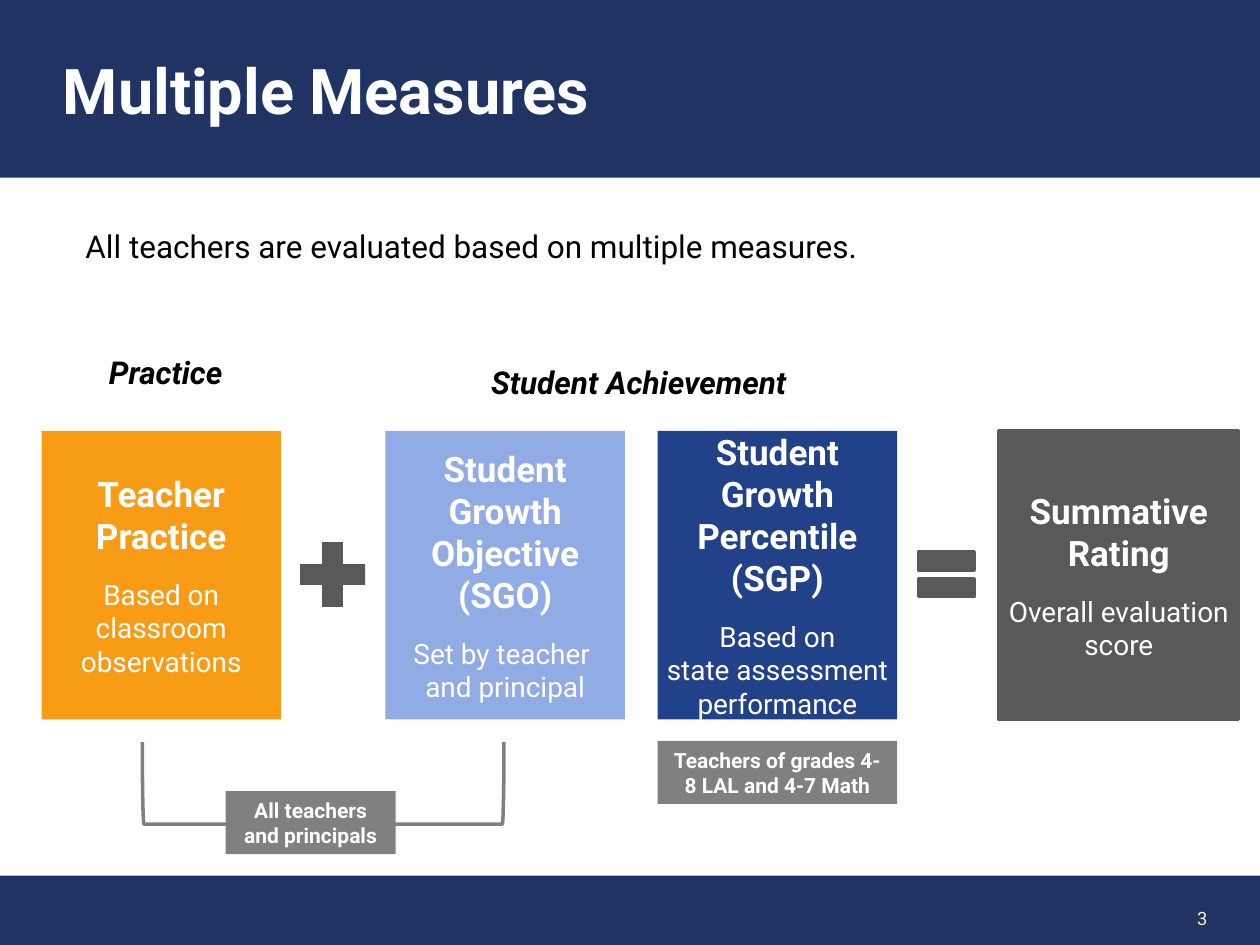
from dataclasses import dataclass

import pptx
import pptx.dml.color
import pptx.enum.shapes
import pptx.enum.text
import pptx.oxml
import pptx.oxml.ns
import pptx.util
from pptx.util import Inches

SHAPE = pptx.enum.shapes.MSO_SHAPE
ALIGN = pptx.enum.text.PP_ALIGN
ANCHOR = pptx.enum.text.MSO_ANCHOR

FONT = "Roboto"
NAVY, WHITE, BLACK = "213363", "FFFFFF", "000000"
DARK_GRAY, GRAY = "595959", "808080"
CARD_TOP, CARD_WIDTH, CARD_HEIGHT = 3.42, 1.9, 2.29


@dataclass
class Line:
    text: str
    size: float
    color: str = WHITE
    bold: bool = False
    italic: bool = False
    align: ALIGN = ALIGN.CENTER
    space_after: float = 0


@dataclass
class Card:
    left: float
    fill: str
    heading: str
    detail: str
    inset: float
    outlined: bool = False


@dataclass
class Label:
    left: float
    top: float
    width: float
    line: Line
    height: float = 0.4
    fill: str = ""
    anchor: ANCHOR = ANCHOR.TOP


CARDS = [
    Card(0.33, "F89C15", "Teacher\vPractice", "Based on classroom observations", 0.05),
    Card(3.06, "91ABE5", "Student Growth Objective\v(SGO)",
         "Set by teacher \vand principal", 0.03),
    Card(5.22, "214189", "Student Growth Percentile (SGP)",
         "Based on\vstate assessment performance", 0.03),
    Card(7.93, DARK_GRAY, "Summative Rating", "Overall evaluation score", 0, True),
]

LABELS = [
    Label(1.79, 6.28, 1.35, Line("All teachers and principals", 12, bold=True), 0.5, GRAY),
    Label(5.22, 5.88, CARD_WIDTH,
          Line("Teachers of grades 4-8 LAL and 4-7 Math", 12, bold=True), 0.5, GRAY),
    Label(0.37, 2.75, 1.89, Line("Practice", 18, BLACK, True, True)),
    Label(3.04, 2.83, 4.06, Line("Student Achievement", 18, BLACK, True, True)),
    Label(0.58, 1.75, 7.5, Line("All teachers are evaluated based on multiple measures.",
                                18, BLACK, align=ALIGN.LEFT)),
    Label(8.22, 7.09, 1.46, Line("3", 10.5, "FEEBD0", align=ALIGN.RIGHT),
          anchor=ANCHOR.MIDDLE),
]


def rgb(color: str) -> pptx.dml.color.RGBColor:
    return pptx.dml.color.RGBColor.from_string(color)


def add_box(page, kind, left: float, top: float, width: float, height: float,
            fill: str = "", outline: str = ""):
    box = page.shapes.add_shape(kind, Inches(left), Inches(top), Inches(width), Inches(height))
    box.shadow.inherit = False
    if fill:
        box.fill.solid()
        box.fill.fore_color.rgb = rgb(fill)
    else:
        box.fill.background()
    if outline:
        box.line.color.rgb = rgb(outline)
        box.line.width = pptx.util.Pt(2)
    else:
        box.line.fill.background()
    return box


def write(box, lines: list[Line], anchor=ANCHOR.MIDDLE,
          left: float = 0.1, right: float = 0.1) -> None:
    frame = box.text_frame
    frame.word_wrap = True
    frame.vertical_anchor = anchor
    frame.margin_left, frame.margin_right = Inches(left), Inches(right)
    frame.margin_top = frame.margin_bottom = Inches(0.05)
    for index, line in enumerate(lines):
        para = frame.add_paragraph() if index else frame.paragraphs[0]
        para.text = line.text
        para.alignment = line.align
        para.space_after = pptx.util.Pt(line.space_after)
        for span in para.runs:
            span.font.name = FONT
            span.font.size = pptx.util.Pt(line.size)
            span.font.bold, span.font.italic = line.bold, line.italic
            span.font.color.rgb = rgb(line.color)
        # Line breaks take the text size, so that line heights agree
        for line_break in para._p.findall(pptx.oxml.ns.qn("a:br")):
            properties = pptx.oxml.parse_xml(
                f'<a:rPr {pptx.oxml.ns.nsdecls("a")} sz="{round(line.size * 100)}"/>')
            line_break.append(properties)


def draw_card(page, card: Card) -> None:
    box = add_box(page, SHAPE.RECTANGLE, card.left, CARD_TOP, CARD_WIDTH, CARD_HEIGHT,
                  card.fill, card.fill if card.outlined else "")
    write(box, [Line(card.heading, 20, bold=True, space_after=12), Line(card.detail, 16)],
          left=card.inset, right=card.inset)


def draw_label(page, label: Label) -> None:
    place = (label.left, label.top, label.width, label.height)
    if label.fill:
        box = add_box(page, SHAPE.RECTANGLE, *place, label.fill)
    else:
        box = page.shapes.add_textbox(*map(Inches, place))
    write(box, [label.line], label.anchor)


def main() -> None:
    deck = pptx.Presentation()
    deck.slide_width, deck.slide_height = Inches(10), Inches(7.5)
    page = deck.slides.add_slide(deck.slide_layouts[6])

    # Footer band and title band
    add_box(page, SHAPE.RECTANGLE, 0, 6.95, 10, 0.55, NAVY)
    title = add_box(page, SHAPE.RECTANGLE, 0, 0, 10, 1.41, NAVY)
    write(title, [Line("Multiple Measures", 36, bold=True, align=ALIGN.LEFT)], left=0.5)

    # Measures and the signs between them
    for card in CARDS:
        draw_card(page, card)
    add_box(page, SHAPE.MATH_PLUS, 2.29, 4.21, 0.7, 0.7, DARK_GRAY)
    add_box(page, SHAPE.MATH_EQUAL, 7.21, 4.26, 0.6, 0.6, DARK_GRAY, DARK_GRAY)

    # Bracket opening upwards under the first two measures
    bracket = add_box(page, SHAPE.LEFT_BRACKET, 2.24, 4.78, 0.65, 2.87, outline=GRAY)
    bracket.adjustments[0] = 0.02
    bracket.rotation = 270

    # Headings, notes and page number
    for label in LABELS:
        draw_label(page, label)

    deck.save("out.pptx")


if __name__ == "__main__":
    main()
